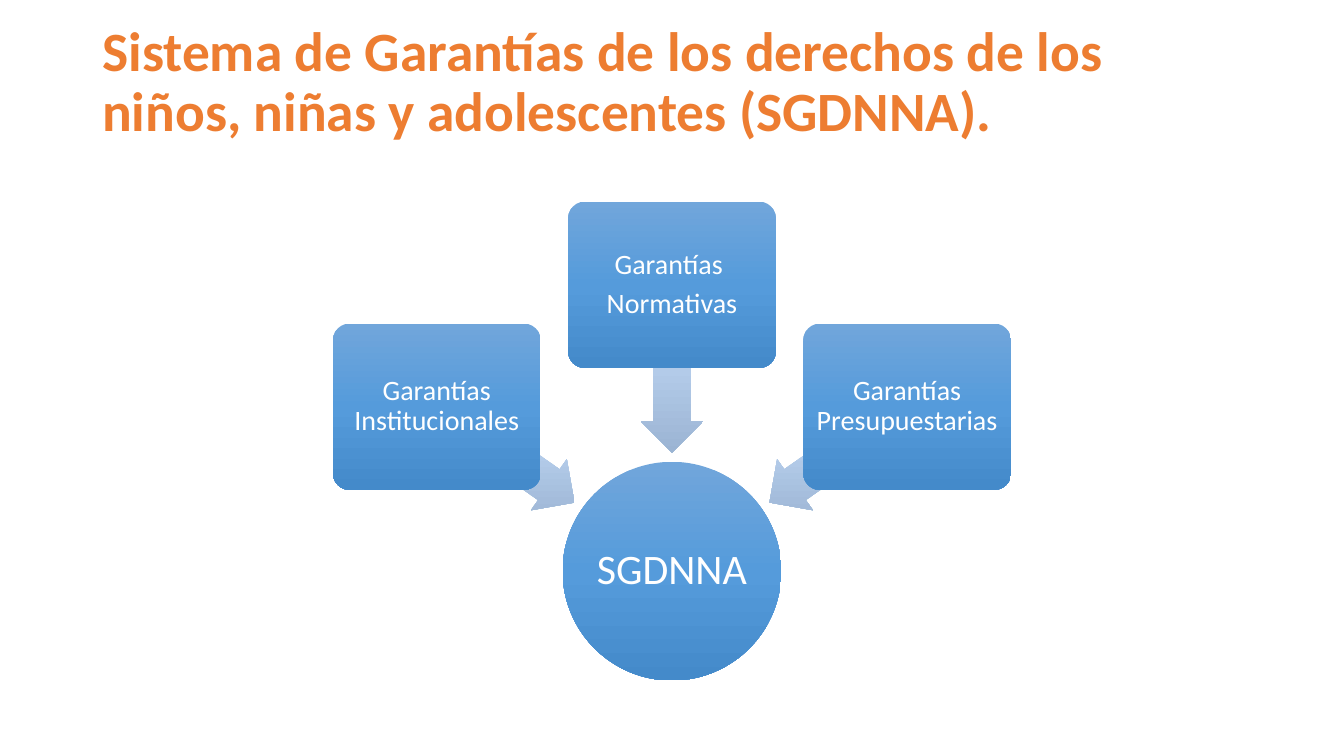
from copy import deepcopy

from pptx import Presentation
from pptx.dml.color import RGBColor
from pptx.enum import shapes, text
from pptx.oxml.ns import qn
from pptx.util import Pt

COLORS = {
    "title": "ED7D31",
    "label": "FFFFFF",
    "node": ["71A6DB", "559BDB", "448ACA"],
    "arrow": ["C0D2EB", "B3CBE9", "9BB4D3"],
}
CENTER_X = 480
CIRCLE_SIZE = 156.2
BOX_W, BOX_H = 148.4, 118.8
ARROW_W, ARROW_H = 119.5, 44.6


def add_node(kind, center_x, center_y, width, height, colors):
    """Add a borderless shape with a vertical three-stop gradient."""
    node = page.shapes.add_shape(kind, Pt(center_x - width / 2), Pt(center_y - height / 2),
                                 Pt(width), Pt(height))
    node.shadow.inherit = False
    node.line.fill.background()
    node.fill.gradient()
    node.fill.gradient_angle = 270
    gradient = node._element.spPr.find(qn("a:gradFill"))
    gradient.set("rotWithShape", "0")
    stops = gradient.find(qn("a:gsLst"))
    stops.insert(1, deepcopy(stops[0]))
    for stop, position, color in zip(node.fill.gradient_stops, (0, 0.5, 1), colors):
        stop.position = position
        stop.color.rgb = RGBColor.from_string(color)
    return node


def write(box, lines, size, color, align, inset=None, bold=False):
    """Fill a shape with one paragraph per line."""
    frame = box.text_frame
    frame.word_wrap = True
    frame.vertical_anchor = text.MSO_ANCHOR.MIDDLE
    if inset is not None:
        frame.margin_left = frame.margin_right = Pt(inset)
        frame.margin_top = frame.margin_bottom = Pt(inset)
    for index, line in enumerate(lines):
        para = frame.add_paragraph() if index else frame.paragraphs[0]
        para.alignment = align
        para.line_spacing = 0.9
        if index < len(lines) - 1:
            para.space_after = Pt(6.5)
        span = para.add_run()
        span.text = line
        span.font.name = "Calibri"
        span.font.size = Pt(size)
        span.font.bold = bold
        span.font.color.rgb = RGBColor.from_string(color)


deck = Presentation()
deck.slide_width, deck.slide_height = Pt(960), Pt(540)
page = deck.slides.add_slide(deck.slide_layouts[6])

# Title
title = page.shapes.add_textbox(Pt(66), Pt(7.4), Pt(828), Pt(104.4))
write(title, ["Sistema de Garantías de los derechos de los niños, niñas y adolescentes (SGDNNA)."],
      39.6, COLORS["title"], text.PP_ALIGN.LEFT, bold=True)

# Central circle
circle = add_node(shapes.MSO_SHAPE.OVAL, CENTER_X, 408, CIRCLE_SIZE, CIRCLE_SIZE, COLORS["node"])
write(circle, ["SGDNNA"], 30, COLORS["label"], text.PP_ALIGN.CENTER, inset=1.5)

# Guarantees, each with an arrow towards the circle: side, box y, arrow y, lines
guarantees = [
    (-1, 290.5, 324.7, ["Garantías Institucionales"]),
    (0, 203.4, 263.5, ["Garantías ", "Normativas"]),
    (1, 290.5, 324.7, ["Garantías Presupuestarias"]),
]
for side, box_y, arrow_y, lines in guarantees:
    arrow = add_node(shapes.MSO_SHAPE.LEFT_ARROW, CENTER_X + side * 118.6, arrow_y,
                     ARROW_W, ARROW_H, COLORS["arrow"])
    arrow.adjustments[0] = 0.6
    arrow.adjustments[1] = 0.5
    arrow.rotation = 270 + side * 55

    box = add_node(shapes.MSO_SHAPE.ROUNDED_RECTANGLE, CENTER_X + side * 168, box_y,
                   BOX_W, BOX_H, COLORS["node"])
    box.adjustments[0] = 0.1
    write(box, lines, 20, COLORS["label"], text.PP_ALIGN.CENTER, inset=3)

deck.save("out.pptx")
